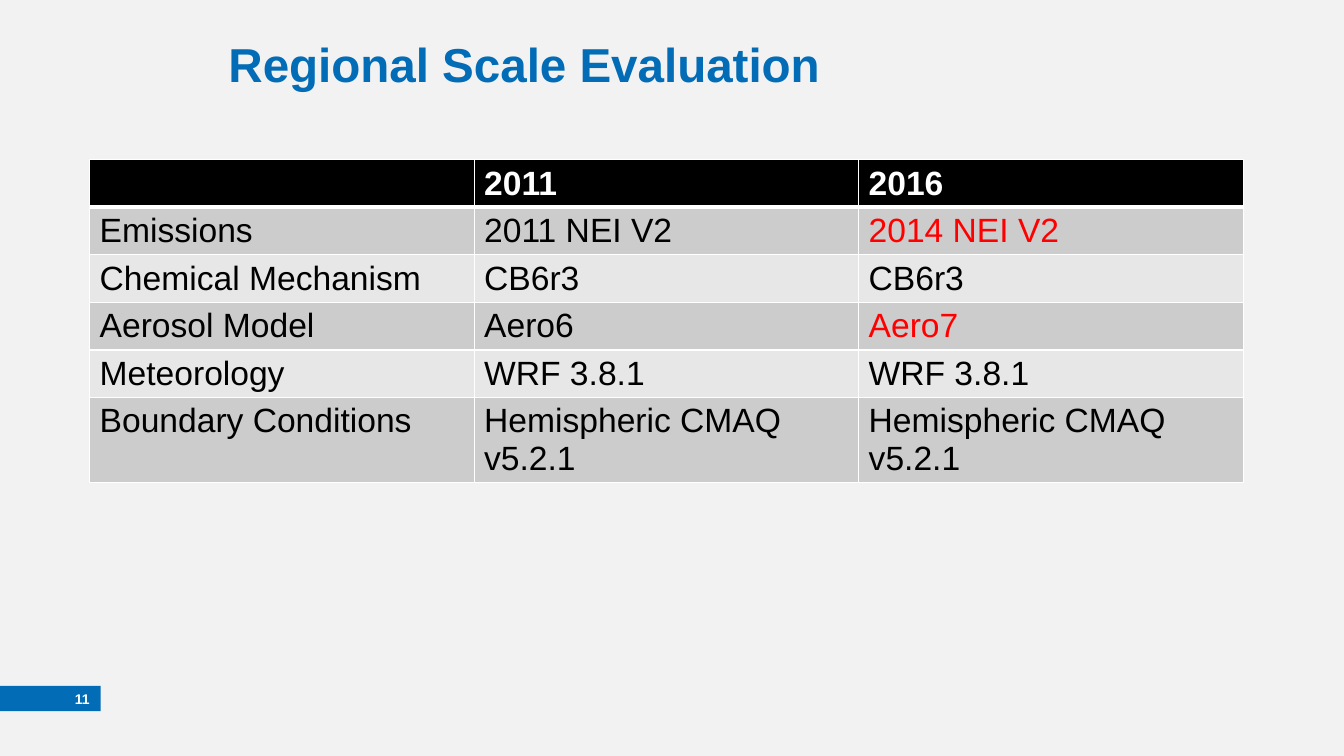
import pptx
import pptx.dml.color
import pptx.enum.shapes
import pptx.enum.text
import pptx.oxml
import pptx.oxml.ns
import pptx.util

Pt = pptx.util.Pt
ANCHOR = pptx.enum.text.MSO_ANCHOR
ALIGN = pptx.enum.text.PP_ALIGN

COLORS = {
    "background": "F2F2F2",
    "accent": "026CB6",
    "white": "FFFFFF",
    "black": "000000",
    "changed": "FF0000",
    "odd_row": "CCCCCC",
    "even_row": "E7E7E7",
}

CONFIGURATIONS = [
    ("", "2011", "2016"),
    ("Emissions", "2011 NEI V2", "2014 NEI V2"),
    ("Chemical Mechanism", "CB6r3", "CB6r3"),
    ("Aerosol Model", "Aero6", "Aero7"),
    ("Meteorology", "WRF 3.8.1", "WRF 3.8.1"),
    ("Boundary Conditions", "Hemispheric CMAQ v5.2.1", "Hemispheric CMAQ v5.2.1"),
]
CHANGED_SETTINGS = {"2014 NEI V2", "Aero7"}


def rgb(color):
    return pptx.dml.color.RGBColor.from_string(COLORS[color])


class SlideBuilder:
    font = "Arial"

    def __init__(self, presentation):
        self.slide = presentation.slides.add_slide(presentation.slide_layouts[5])
        self.paint(self.slide.background.fill, "background")

    def paint(self, fill, color):
        fill.solid()
        fill.fore_color.rgb = rgb(color)

    def set_text(self, frame, text, size, color, bold, align=ALIGN.LEFT):
        frame.text = text
        frame.paragraphs[0].alignment = align
        for run in frame.paragraphs[0].runs:
            run.font.name = self.font
            run.font.size = Pt(size)
            run.font.bold = bold
            run.font.color.rgb = rgb(color)

    def title(self, text, left, top, width, height):
        heading = self.slide.shapes.title
        heading.left, heading.top = Pt(left), Pt(top)
        heading.width, heading.height = Pt(width), Pt(height)
        heading.text_frame.vertical_anchor = ANCHOR.MIDDLE
        self.set_text(heading.text_frame, text, 34, "accent", True)

    def page_number(self, text, left, top, width, height):
        """Draw the accent bar with the number set against its right end."""
        bar = self.slide.shapes.add_shape(
            pptx.enum.shapes.MSO_SHAPE.RECTANGLE,
            Pt(left), Pt(top), Pt(width), Pt(height))
        bar.shadow.inherit = False
        self.paint(bar.fill, "accent")
        bar.line.fill.background()
        frame = bar.text_frame
        frame.margin_left = frame.margin_top = frame.margin_bottom = 0
        frame.margin_right = Pt(8)
        frame.vertical_anchor = ANCHOR.MIDDLE
        self.set_text(frame, text, 10, "white", True, ALIGN.RIGHT)

    def border(self, cell, side, width):
        cell._tc.get_or_add_tcPr().append(pptx.oxml.parse_xml(
            f'<a:ln{side} {pptx.oxml.ns.nsdecls("a")} w="{Pt(width)}"><a:solidFill>'
            f'<a:srgbClr val="{COLORS["white"]}"/></a:solidFill></a:ln{side}>'))

    def table(self, rows, left, top, width, row_height):
        grid = self.slide.shapes.add_table(
            len(rows), len(rows[0]), Pt(left), Pt(top),
            Pt(width), Pt(row_height * len(rows))).table
        for row, texts in enumerate(rows):
            header = row == 0
            fill = "black" if header else "odd_row" if row % 2 else "even_row"
            for column, text in enumerate(texts):
                cell = grid.cell(row, column)
                for side in "LRTB":
                    header_rule = (row, side) in ((0, "B"), (1, "T"))
                    self.border(cell, side, 3 if header_rule else 1)
                self.paint(cell.fill, fill)
                color = ("white" if header
                         else "changed" if text in CHANGED_SETTINGS else "black")
                self.set_text(cell.text_frame, text, 24, color, header)


def main():
    presentation = pptx.Presentation()
    presentation.slide_width, presentation.slide_height = Pt(960), Pt(540)
    evaluation = SlideBuilder(presentation)
    evaluation.title("Regional Scale Evaluation", 156, 18, 792, 54)
    evaluation.table(CONFIGURATIONS, 64, 114, 824, 29.5)
    evaluation.page_number("11", 0, 490, 72, 18)
    presentation.save("out.pptx")


if __name__ == "__main__":
    main()
